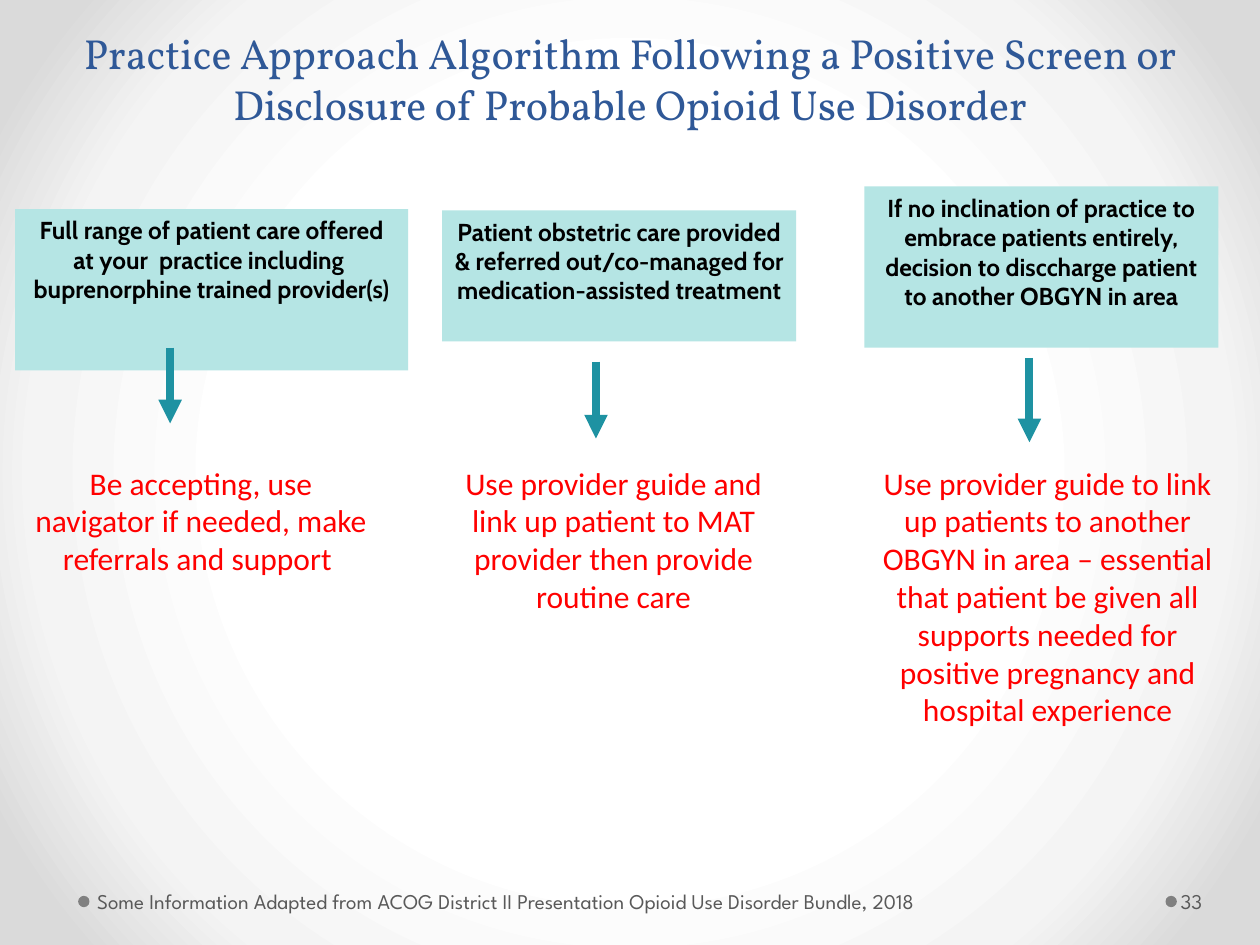
from dataclasses import dataclass

from lxml import etree
from pptx import Presentation
from pptx.dml.color import RGBColor
from pptx.enum.shapes import MSO_CONNECTOR as Connector, MSO_SHAPE as Shape
from pptx.enum.text import MSO_ANCHOR as Anchor, MSO_AUTO_SIZE as AutoSize, PP_ALIGN as Align
from pptx.oxml import parse_xml
from pptx.oxml.ns import nsdecls, qn
from pptx.util import Inches, Pt


@dataclass(frozen=True)
class Theme:
    title_font: str = "Vollkorn"
    box_font: str = "Cabin"
    action_font: str = "Calibri"
    footer_font: str = "League Spartan"
    title_size: int = 24
    title_spacing: int = 29
    box_size: int = 14
    action_size: int = 18
    footer_size: int = 12
    arrow_width: float = 4.5
    title: str = "2F5897"
    box_fill: str = "B5E5E4"
    box_text: str = "000000"
    action: str = "FF0000"
    arrow: str = "1E92A2"
    footer: str = "595959"
    bullet: str = "808080"
    background: tuple = ((50, "FFFFFF"), (76, "F4F4F4"), (92, "DADADA"))


@dataclass(frozen=True)
class Area:
    left: float
    top: float
    width: float
    height: float

    def lengths(self) -> list:
        return [Inches(n) for n in (self.left, self.top, self.width, self.height)]


@dataclass(frozen=True)
class Pathway:
    """One care option: a box, the arrow below it and the action it leads to."""
    option: tuple
    box: Area
    arrow_x: float
    arrow_top: float
    arrow_bottom: float
    action: str
    action_area: Area


THEME = Theme()
ACTION_TOP = 3.63
TITLE = ("Practice Approach Algorithm Following a Positive Screen or "
         "Disclosure of Probable Opioid Use Disorder")
SOURCE = "Some Information Adapted from ACOG District II Presentation Opioid Use Disorder Bundle, 2018"
PATHWAYS = [
    Pathway(("Full range of patient care offered at your  practice including ",
             "buprenorphine trained provider(s)"),
            Area(0.12, 1.66, 3.12, 1.28), 1.35, 2.76, 3.36,
            "Be accepting, use navigator if needed, make referrals and support ",
            Area(0.14, ACTION_TOP, 2.91, 1.31)),
    Pathway(("Patient obstetric care provided & referred out/co-managed for "
             "medication-assisted treatment",),
            Area(3.51, 1.67, 2.81, 1.04), 4.73, 2.87, 3.48,
            "Use provider guide and link up patient to MAT provider then provide routine care",
            Area(3.41, ACTION_TOP, 2.92, 1.31)),
    Pathway(("If no inclination of practice to embrace patients entirely, "
             "decision to disccharge patient to another OBGYN in area",),
            Area(6.86, 1.48, 2.81, 1.28), 8.17, 2.84, 3.51,
            "Use provider guide to link up patients to another OBGYN in area – essential that "
            "patient be given all supports needed for positive pregnancy and hospital experience",
            Area(6.86, ACTION_TOP, 2.91, 2.22)),
]


def write(shape, *lines: str, font: str, size: float, color: str, bold: bool = False,
          align=Align.CENTER, anchor=Anchor.TOP, spacing=None,
          insets: tuple = (0.1, 0.05, 0.1, 0.05)) -> None:
    """Fill a shape with one paragraph per line."""
    frame = shape.text_frame
    frame.word_wrap = True
    frame.auto_size = AutoSize.NONE
    frame.vertical_anchor = anchor
    (frame.margin_left, frame.margin_top,
     frame.margin_right, frame.margin_bottom) = [Inches(n) for n in insets]
    for index, line in enumerate(lines):
        para = frame.add_paragraph() if index else frame.paragraphs[0]
        para.alignment = align
        if spacing:
            para.line_spacing = Pt(spacing)
        span = para.add_run()
        span.text = line
        span.font.name = font
        span.font.size = Pt(size)
        span.font.bold = bold
        span.font.color.rgb = RGBColor.from_string(color)


def add_filled(page, kind, area: Area, color: str):
    shape = page.shapes.add_shape(kind, *area.lengths())
    shape.shadow.inherit = False
    shape.fill.solid()
    shape.fill.fore_color.rgb = RGBColor.from_string(color)
    shape.line.fill.background()
    return shape


def add_arrow(page, x: float, top: float, bottom: float) -> None:
    arrow = page.shapes.add_connector(
        Connector.STRAIGHT, Inches(x), Inches(top), Inches(x), Inches(bottom))
    arrow.line.color.rgb = RGBColor.from_string(THEME.arrow)
    arrow.line.width = Pt(THEME.arrow_width)
    etree.SubElement(arrow.line._get_or_add_ln(), qn("a:tailEnd"), type="triangle")
    etree.SubElement(arrow._element.spPr, qn("a:effectLst"))


def paint_background(page) -> None:
    """Give the page a circular gradient that darkens outwards."""
    fill = page.background.fill
    fill.gradient()
    old = page._element.find(".//" + qn("a:gradFill"))
    stops = "".join(f'<a:gs pos="{place * 1000}"><a:srgbClr val="{color}"/></a:gs>'
                    for place, color in THEME.background)
    old.getparent().replace(old, parse_xml(
        f'<a:gradFill {nsdecls("a")} rotWithShape="1"><a:gsLst>{stops}</a:gsLst>'
        '<a:path path="circle"><a:fillToRect l="50000" t="50000" r="50000" b="50000"/>'
        '</a:path></a:gradFill>'))


def add_title(page) -> None:
    title = page.shapes.title
    title.left, title.top, title.width, title.height = Area(0.5, 0, 9, 1.07).lengths()
    write(title, TITLE, font=THEME.title_font, size=THEME.title_size, color=THEME.title,
          anchor=Anchor.BOTTOM, spacing=THEME.title_spacing)


def add_pathway(page, pathway: Pathway) -> None:
    box = add_filled(page, Shape.RECTANGLE, pathway.box, THEME.box_fill)
    write(box, *pathway.option, font=THEME.box_font, size=THEME.box_size,
          color=THEME.box_text, bold=True)
    action = page.shapes.add_textbox(*pathway.action_area.lengths())
    write(action, pathway.action, font=THEME.action_font, size=THEME.action_size,
          color=THEME.action)
    add_arrow(page, pathway.arrow_x, pathway.arrow_top, pathway.arrow_bottom)


def add_footer(page, text: str, bullet_left: float, area: Area, insets: tuple) -> None:
    add_filled(page, Shape.OVAL, Area(bullet_left, 7.11, 0.09, 0.09), THEME.bullet)
    footer = page.shapes.add_textbox(*area.lengths())
    write(footer, text, font=THEME.footer_font, size=THEME.footer_size, color=THEME.footer,
          align=Align.LEFT, anchor=Anchor.MIDDLE, insets=insets)


def main() -> None:
    deck = Presentation()
    deck.slide_width, deck.slide_height = Inches(10), Inches(7.5)
    page = deck.slides.add_slide(deck.slide_layouts.get_by_name("Title Only"))
    paint_background(page)
    add_title(page)
    for pathway in PATHWAYS:
        add_pathway(page, pathway)
    add_footer(page, SOURCE, 0.62, Area(0.72, 6.95, 8.42, 0.4), (0.05, 0.05, 0.1, 0.05))
    add_footer(page, "33", 9.25, Area(9.34, 6.95, 0.61, 0.4), (0.03, 0.05, 0.05, 0.05))
    deck.save("out.pptx")


if __name__ == "__main__":
    main()
